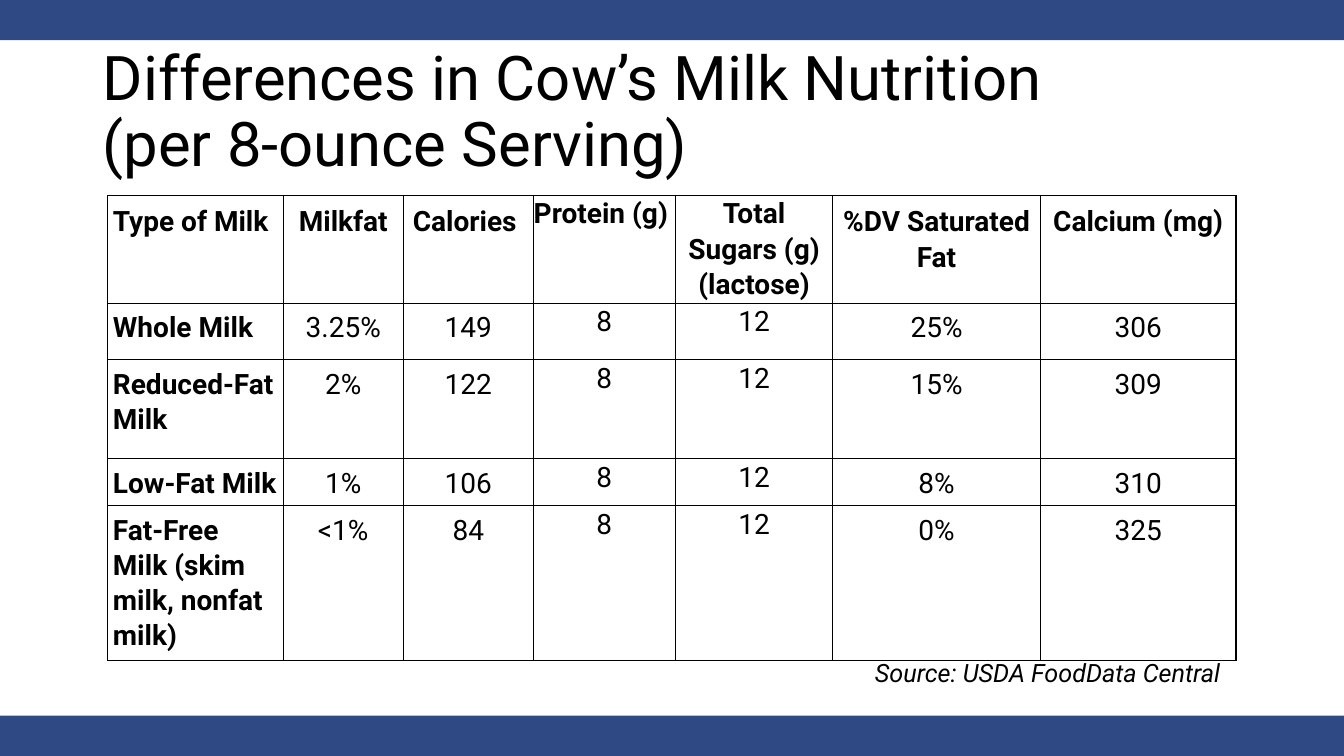
from lxml.etree import SubElement
from pptx import Presentation
from pptx.dml.color import RGBColor
from pptx.enum.shapes import MSO_SHAPE
from pptx.enum.text import MSO_ANCHOR, PP_ALIGN
from pptx.oxml.ns import qn
from pptx.util import Inches, Pt

BLUE = RGBColor(0x2F, 0x49, 0x84)
BLACK = RGBColor(0, 0, 0)


def write_text(text_frame, text, size, bold=False, italic=False,
               align=PP_ALIGN.LEFT, line_spacing=1.0):
    text_frame.word_wrap = True
    paragraph = text_frame.paragraphs[0]
    paragraph.text = text
    paragraph.alignment = align
    paragraph.line_spacing = line_spacing
    for run in paragraph.runs:
        run.font.name = "Roboto"
        run.font.size = Pt(size)
        run.font.bold = bold
        run.font.italic = italic
        run.font.color.rgb = BLACK


def add_borders(cell):
    properties = cell._tc.get_or_add_tcPr()
    for side in ("a:lnL", "a:lnR", "a:lnT", "a:lnB"):
        line = SubElement(properties, qn(side), w=str(Pt(1)))
        fill = SubElement(line, qn("a:solidFill"))
        SubElement(fill, qn("a:srgbClr"), val=str(BLACK))


presentation = Presentation()
presentation.slide_width = Inches(13.33)
presentation.slide_height = Inches(7.5)
slide = presentation.slides.add_slide(presentation.slide_layouts[6])

for band_top in (0, 7.1):
    band = slide.shapes.add_shape(
        MSO_SHAPE.RECTANGLE, 0, Inches(band_top), Inches(13.33), Inches(0.4))
    band.shadow.inherit = False
    band.fill.solid()
    band.fill.fore_color.rgb = BLUE
    band.line.fill.background()

title = slide.shapes.add_textbox(
    Inches(0.92), Inches(0.4), Inches(11.5), Inches(1.45))
title.text_frame.vertical_anchor = MSO_ANCHOR.MIDDLE
write_text(title.text_frame,
           "Differences in Cow’s Milk Nutrition\n(per 8-ounce Serving)",
           size=44, line_spacing=0.9)

milk_rows = [
    ("Type of Milk", "Milkfat", "Calories ", "Protein (g) ",
     "Total Sugars (g) (lactose)", "%DV Saturated Fat", "Calcium (mg)"),
    ("Whole Milk", "3.25%", "149", "8", "12", "25%", "306"),
    ("Reduced-Fat Milk", "2%", "122", "8", "12", "15%", "309"),
    ("Low-Fat Milk", "1%", "106", "8", "12", "8%", "310"),
    ("Fat-Free Milk (skim milk, nonfat milk)",
     "<1%", "84", "8", "12", "0%", "325"),
]
column_widths = (1.74, 1.19, 1.29, 1.41, 1.56, 2.06, 1.94)
row_heights = (1.01, 0.56, 0.98, 0.46, 1.41)
unpadded_columns = (3, 4)

table = slide.shapes.add_table(
    len(milk_rows), len(column_widths), Inches(1.07), Inches(1.94),
    Inches(sum(column_widths)), Inches(sum(row_heights))).table
table.first_row = False
table.horz_banding = False
for column, width in zip(table.columns, column_widths):
    column.width = Inches(width)
for row, height in zip(table.rows, row_heights):
    row.height = Inches(height)

for row_index, values in enumerate(milk_rows):
    for column_index, value in enumerate(values):
        cell = table.cell(row_index, column_index)
        is_header = row_index == 0
        is_name = column_index == 0
        padded = column_index not in unpadded_columns
        margin = Inches(0.05 if padded else 0)
        top_margin = 0.08 if is_header else 0.06
        cell.margin_left = cell.margin_right = cell.margin_bottom = margin
        cell.margin_top = Inches(top_margin if padded else 0)
        add_borders(cell)
        cell.fill.background()
        write_text(cell.text_frame, value, size=20,
                   bold=is_header or is_name,
                   align=PP_ALIGN.LEFT if is_name else PP_ALIGN.CENTER,
                   line_spacing=1.07)

source = slide.shapes.add_textbox(
    Inches(8.58), Inches(6.47), Inches(3.83), Inches(0.4))
write_text(source.text_frame, "Source: USDA FoodData Central",
           size=18, italic=True)

presentation.save("out.pptx")
